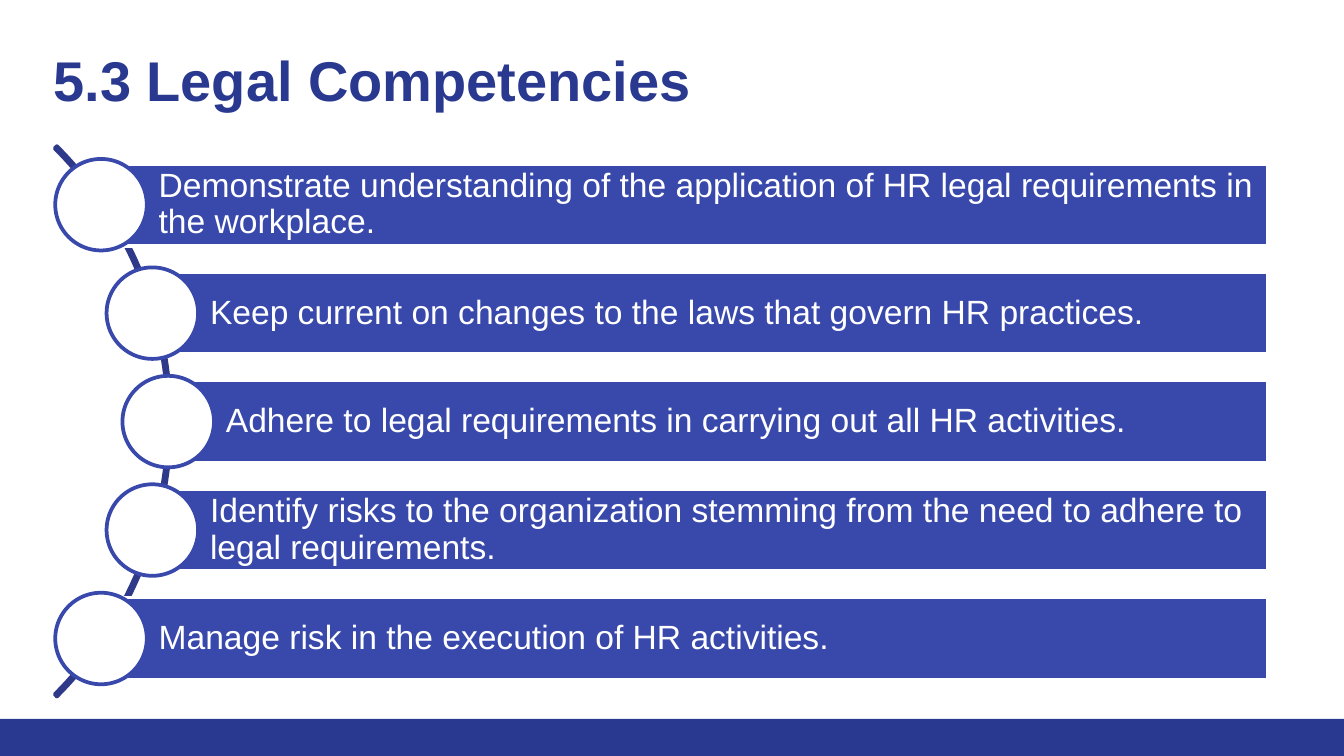
from pptx import Presentation
from pptx.dml.color import RGBColor
from pptx.enum.shapes import MSO_SHAPE
from pptx.enum.text import MSO_ANCHOR, PP_ALIGN
from pptx.util import Cm, Pt
from lxml.etree import SubElement

NAVY = RGBColor(0x2A, 0x39, 0x90)
INK = RGBColor(0x2E, 0x3A, 0x89)
BLUE = RGBColor(0x39, 0x49, 0xAB)
WHITE = RGBColor(0xFF, 0xFF, 0xFF)

# Centre of each circle and wording of its bar
ITEMS = [
    (1.91, "Demonstrate understanding of the application of HR legal "
           "requirements in the workplace."),
    (2.88, "Keep current on changes to the laws that govern HR practices."),
    (3.18, "Adhere to legal requirements in carrying out all HR activities."),
    (2.88, "Identify risks to the organization stemming from the need to "
           "adhere to legal requirements."),
    (1.91, "Manage risk in the execution of HR activities."),
]
FIRST, PITCH = 3.87, 2.05
RIGHT, HIGH, DIAM = 23.97, 1.55, 1.73


def add_shape(slide, kind, left, top, width, height, fill=None, line=None):
    shape = slide.shapes.add_shape(
        kind, Cm(left), Cm(top), Cm(width), Cm(height))
    shape.shadow.inherit = False
    if fill is None:
        shape.fill.background()
    else:
        shape.fill.solid()
        shape.fill.fore_color.rgb = fill
    if line is None:
        shape.line.fill.background()
    else:
        shape.line.color.rgb = line
        shape.line.width = Pt(2)
    return shape


def put_text(shape, text, size=18, color=WHITE, bold=False, space=1.0,
             anchor=MSO_ANCHOR.MIDDLE, inset=(0.13, 0.13, 0.13, 0.13)):
    frame = shape.text_frame
    frame.word_wrap = True
    frame.vertical_anchor = anchor
    (frame.margin_left, frame.margin_top,
     frame.margin_right, frame.margin_bottom) = map(Cm, inset)
    para = frame.paragraphs[0]
    para.text = text
    para.alignment = PP_ALIGN.LEFT
    para.line_spacing = space
    font = para.font
    font.name = "Arial"
    font.size = Pt(size)
    font.bold = bold
    font.color.rgb = color


def add_title(slide, text):
    box = slide.shapes.add_textbox(Cm(0.76), Cm(0.51), Cm(23.67), Cm(1.68))
    put_text(box, text, size=30, color=NAVY, bold=True,
             anchor=MSO_ANCHOR.TOP, inset=(0.25, 0.35, 0.25, 0.25))


def add_arc(slide):
    arc = add_shape(slide, MSO_SHAPE.BLOCK_ARC, -11.48, 0.61, 14.71, 14.71,
                    line=INK)
    for spot, value in enumerate((189, 27, 0.004)):
        arc.adjustments[spot] = value


def add_item(slide, mid, row, text):
    level = FIRST + row * PITCH
    bar = add_shape(slide, MSO_SHAPE.RECTANGLE, mid, level - HIGH / 2,
                    RIGHT - mid, HIGH, BLUE, WHITE)
    put_text(bar, text, space=0.9, inset=(1.09, 0.13, 0.13, 0.13))
    add_shape(slide, MSO_SHAPE.OVAL, mid - DIAM / 2, level - DIAM / 2,
              DIAM, DIAM, WHITE, BLUE)


def main():
    deck = Presentation()
    deck.slide_width, deck.slide_height = Cm(25.4), Cm(14.29)
    slide = deck.slides.add_slide(deck.slide_layouts[6])

    # Footer band and title
    add_shape(slide, MSO_SHAPE.RECTANGLE, 0, 13.59, 25.4, 0.7, NAVY)
    add_title(slide, "5.3 Legal Competencies")

    # Curved list
    add_arc(slide)
    for row, (mid, text) in enumerate(ITEMS):
        add_item(slide, mid, row, text)

    deck.save("out.pptx")


if __name__ == "__main__":
    main()
